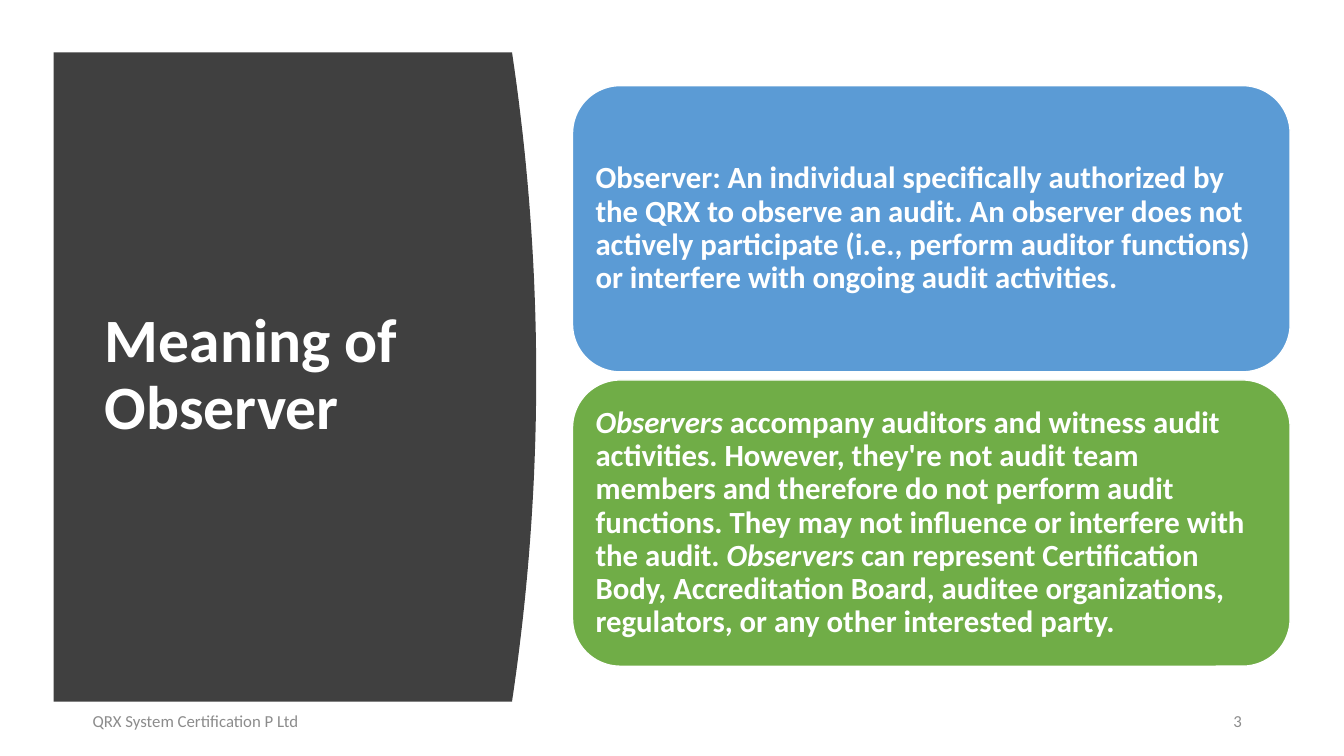
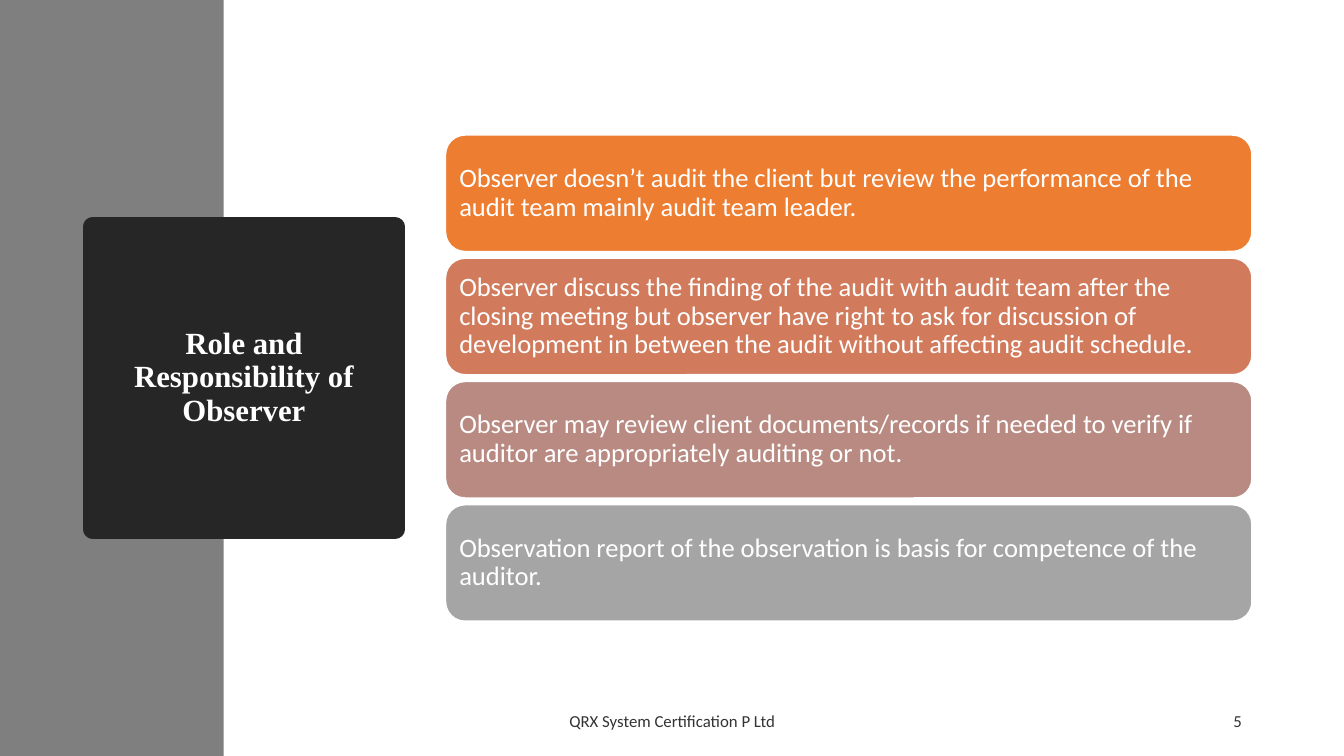
import pptx
import pptx.dml.color
import pptx.enum.shapes
import pptx.enum.text
import pptx.util

WHITE = "FFFFFF"
FOOTER = "QRX System Certification P Ltd"
NO_BREAK = chr(160)
color = pptx.dml.color.RGBColor.from_string
shapes_enum = pptx.enum.shapes.MSO_SHAPE
align = pptx.enum.text.PP_ALIGN

presentation = pptx.Presentation()
presentation.slide_width = pptx.util.Inches(13.333)
presentation.slide_height = pptx.util.Inches(7.5)


def place(left, top, width, height):
    """Turn percentages of the slide's size into lengths."""
    across, down = presentation.slide_width / 100, presentation.slide_height / 100
    return [round(left * across), round(top * down), round(width * across), round(height * down)]


def write_text(shape, text, size, font="Calibri", fill=WHITE, bold=False,
               alignment=align.LEFT, spacing=0.9, inset=None):
    """Write one paragraph; parts between asterisks are italic."""
    frame = shape.text_frame
    frame.word_wrap = True
    frame.auto_size = pptx.enum.text.MSO_AUTO_SIZE.NONE
    frame.vertical_anchor = pptx.enum.text.MSO_ANCHOR.MIDDLE
    if inset is not None:
        frame.margin_left = frame.margin_right = pptx.util.Inches(inset)
        frame.margin_top = frame.margin_bottom = pptx.util.Inches(inset)
    paragraph = frame.paragraphs[0]
    paragraph.alignment = alignment
    paragraph.line_spacing = spacing
    for number, part in enumerate(text.split("*")):
        if part:
            run = paragraph.add_run()
            run.text = part
            run.font.size = pptx.util.Pt(size)
            run.font.name = font
            run.font.bold = bold
            run.font.italic = number % 2 == 1
            run.font.color.rgb = color(fill)


# Each slide: title, backdrop, column of cards, footer
slides = [
    {
        "title": "Meaning of Observer",
        "title_box": (7.05, 14.8, 28.05, 69.87),
        "title_format": {"size": 44},
        "title_fill": None,
        "backdrop": "curved panel",
        "backdrop_fill": "404040",
        "cards": [
            ("5B9BD5", "Observer: An individual specifically authorized by the QRX to observe "
                       "an audit. An observer does not actively participate (i.e., perform "
                       "auditor functions) or interfere with ongoing audit activities."),
            ("70AD47", "*Observers* accompany auditors and witness audit activities. However, "
                       f"they're not audit team members{NO_BREAK}and therefore do not perform "
                       "audit functions. They may not influence or interfere with the audit. "
                       "*Observers* can represent Certification Body, Accreditation Board, "
                       "auditee organizations, regulators, or any other interested party."),
        ],
        "first_card": (42.6, 11.33, 53.4, 37.87),
        "card_gap": 1.06,
        "card_format": {"size": 22, "bold": True, "inset": 0.09},
        "footers": [(FOOTER, 6.15, 33.75, align.LEFT), ("3", 88, 5.15, align.RIGHT)],
        "footer_fill": "8C8C8C",
    },
    {
        "title": "Role and Responsibility of Observer",
        "title_box": (6.9, 30, 22.5, 40),
        "title_format": {"size": 22, "font": "Times New Roman", "alignment": align.CENTER},
        "title_fill": "262626",
        "backdrop": "side band",
        "backdrop_fill": "7F7F7F",
        "cards": [
            ("ED7D31", "Observer doesn’t audit the client but review the performance of the "
                       "audit team mainly audit team leader."),
            ("D17B5C", "Observer discuss the finding of the audit with audit team after the "
                       "closing meeting but observer have right to ask for discussion of "
                       "development in between the audit without affecting audit schedule."),
            ("B98A82", "Observer may review client documents/records if needed to verify if "
                       "auditor are appropriately auditing or not."),
            ("A5A5A5", "Observation report of the observation is basis for competence of the "
                       "auditor."),
        ],
        "first_card": (33.15, 17.87, 60, 15.4),
        "card_gap": 0.9,
        "card_format": {"size": 19, "inset": 0.08},
        "footers": [(FOOTER, 33.15, 33.75, align.CENTER), ("5", 70.65, 22.5, align.RIGHT)],
        "footer_fill": "333333",
    },
]

for content in slides:
    slide = presentation.slides.add_slide(presentation.slide_layouts[5])

    # Backdrop: a panel whose right edge bulges, or a plain band
    if content["backdrop"] == "curved panel":
        left, top, width, height = place(4, 6.93, 34.1, 85.87)
        bulge = place(0, 0, 1.8, 0)[2]
        steps = 40
        edge = []
        for step in range(steps + 1):
            share = step / steps
            offset = bulge * (1 - (2 * share - 1) ** 2)
            edge.append((round(left + width + offset), round(top + height * share)))
        builder = slide.shapes.build_freeform(left, top)
        builder.add_line_segments(edge + [(left, top + height)], close=True)
        backdrop = builder.convert_to_shape()
    else:
        backdrop = slide.shapes.add_shape(shapes_enum.RECTANGLE, *place(0, 0, 16.65, 100))
    backdrop.shadow.inherit = False
    backdrop.fill.solid()
    backdrop.fill.fore_color.rgb = color(content["backdrop_fill"])
    backdrop.line.fill.background()

    # Title, in front of the backdrop
    title = slide.shapes.title
    title.element.addprevious(backdrop.element)
    title.left, title.top, title.width, title.height = place(*content["title_box"])
    if content["title_fill"]:
        title.fill.solid()
        title.fill.fore_color.rgb = color(content["title_fill"])
        title.line.color.rgb = color(content["title_fill"])
        title.line.width = pptx.util.Pt(13.75)
    write_text(title, content["title"], bold=True, **content["title_format"])

    # Cards, one below the other
    left, top, width, height = content["first_card"]
    for row, (fill, text) in enumerate(content["cards"]):
        card_top = top + row * (height + content["card_gap"])
        card = slide.shapes.add_shape(shapes_enum.ROUNDED_RECTANGLE,
                                      *place(left, card_top, width, height))
        card.shadow.inherit = False
        card.fill.solid()
        card.fill.fore_color.rgb = color(fill)
        card.line.color.rgb = color(WHITE)
        card.line.width = pptx.util.Pt(1)
        write_text(card, text, **content["card_format"])

    # Footer and slide number
    for text, left, width, alignment in content["footers"]:
        footer = slide.shapes.add_textbox(*place(left, 92.67, width, 5.33))
        write_text(footer, text, size=12, fill=content["footer_fill"],
                   alignment=alignment, spacing=1.0)

presentation.save("out.pptx")
